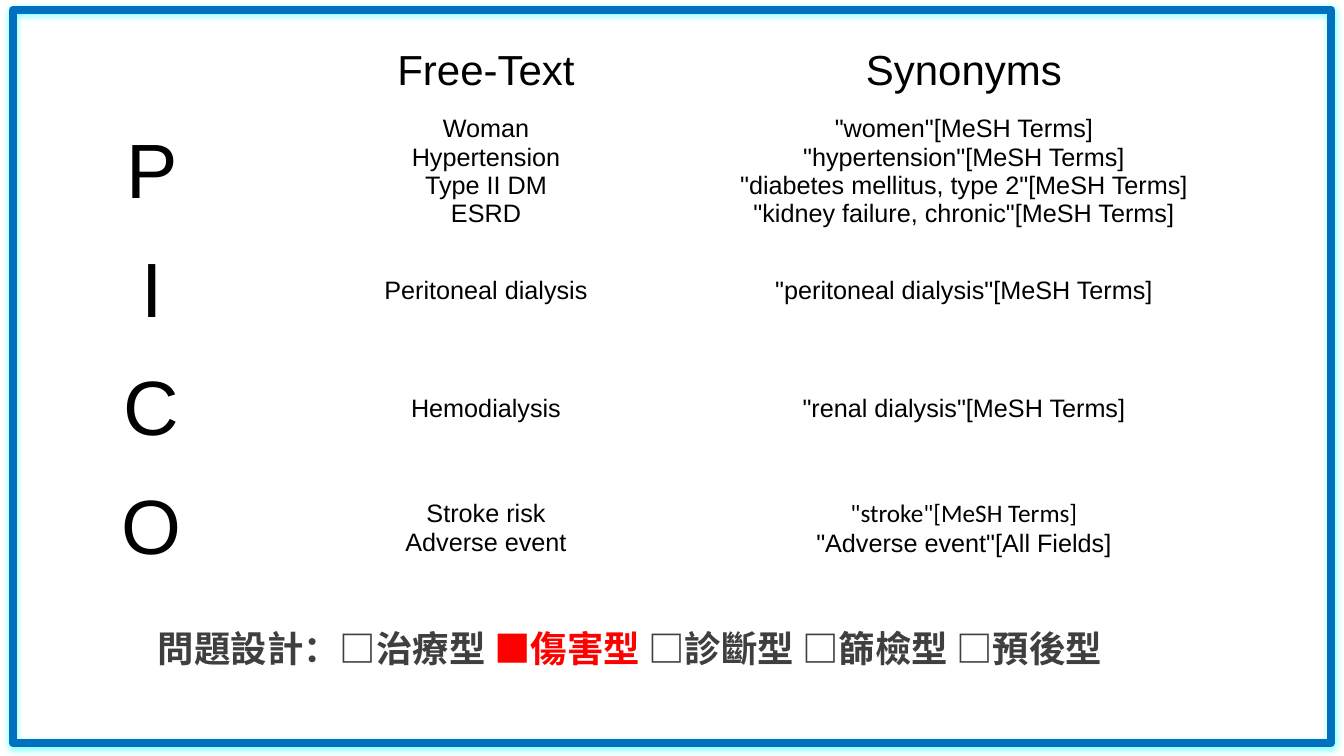
from lxml import etree
from pptx import Presentation, util as u
from pptx.dml.color import RGBColor
from pptx.enum import shapes, text
from pptx.oxml import parse_xml
from pptx.oxml.ns import qn

THEME = {
    "latin": "Arial", "alt": "Calibri", "cjk": "Noto Sans CJK SC",
    "ink": "000000", "frame": "0070C0", "gray": "3F3F3F", "mark": "FF0000",
    "head": 30, "letter": 55, "body": 18, "question": 26,
}
MESH = "[MeSH Terms]"
COLS = [2.23, 4.4, 5.08]
ROWS = [0.82] + [1.18] * 4
GRID = [
    ["", "Free-Text", "Synonyms"],
    ["P", "Woman\nHypertension\nType II DM\nESRD",
     "\n".join(f'"{term}"{MESH}' for term in
               ["women", "hypertension", "diabetes mellitus, type 2", "kidney failure, chronic"])],
    ["I", "Peritoneal dialysis", f'"peritoneal dialysis"{MESH}'],
    ["C", "Hemodialysis", f'"renal dialysis"{MESH}'],
    ["O", "Stroke risk\nAdverse event", f'"stroke"{MESH}\n"Adverse event"[All Fields]'],
]
QUESTION = [("問題設計：□治療型", "gray"), (" ■傷害型", "mark"), (" □診斷型 □篩檢型 □預後型", "gray")]


def add_run(p, words, size, font="latin", color="ink", bold=False):
    p.alignment = text.PP_ALIGN.CENTER
    r = p.add_run()
    r.text = words
    r.font.size = u.Pt(THEME[size])
    r.font.name = THEME[font]
    r.font.bold = bold
    r.font.color.rgb = RGBColor.from_string(THEME[color])
    etree.SubElement(r._r.get_or_add_rPr(), qn("a:ea")).set("typeface", THEME[font])


prs = Presentation()
prs.slide_width, prs.slide_height = u.Inches(13.33), u.Inches(7.5)
s = prs.slides.add_slide(prs.slide_layouts[6])

sp = s.shapes.add_shape(shapes.MSO_SHAPE.RECTANGLE,
                        u.Inches(0.13), u.Inches(0.1), u.Inches(13.07), u.Inches(7.27))
sp.fill.background()
sp.line.color.rgb = RGBColor.from_string(THEME["frame"])
sp.line.width = u.Pt(6)
sp.shadow.inherit = False
sp._element.spPr.find(qn("a:effectLst")).append(parse_xml(
    '<a:outerShdw xmlns:a="http://schemas.openxmlformats.org/drawingml/2006/main" '
    f'blurRad="{u.Pt(4.5)}" dist="{u.Pt(1.5)}" dir="5400000" rotWithShape="0">'
    '<a:srgbClr val="00FFFF"><a:alpha val="50000"/></a:srgbClr></a:outerShdw>'))

tbl = s.shapes.add_table(len(ROWS), len(COLS), u.Inches(0.39), u.Inches(0.29),
                         u.Inches(sum(COLS)), u.Inches(sum(ROWS))).table
tbl.first_row = tbl.horz_banding = False
for col, width in zip(tbl.columns, COLS):
    col.width = u.Inches(width)
for i, (row, height) in enumerate(zip(tbl.rows, ROWS)):
    row.height = u.Inches(height)
    for j, words in enumerate(GRID[i]):
        cell = tbl.cell(i, j)
        cell.fill.background()
        cell.vertical_anchor = text.MSO_ANCHOR.MIDDLE
        cell.margin_left = cell.margin_right = u.Inches(0.06)
        cell.margin_top = cell.margin_bottom = 0
        size = "head" if i == 0 else "letter" if j == 0 else "body"
        for n, line in enumerate(words.split("\n") if words else []):
            tf = cell.text_frame
            p = tf.add_paragraph() if n else tf.paragraphs[0]
            add_run(p, line, size, "alt" if line.startswith('"stroke"') else "latin")

tf = s.shapes.add_textbox(u.Inches(1.16), u.Inches(6.16), u.Inches(10.18), u.Inches(0.54)).text_frame
tf.word_wrap = True
tf.auto_size = text.MSO_AUTO_SIZE.SHAPE_TO_FIT_TEXT
for words, color in QUESTION:
    add_run(tf.paragraphs[0], words, "question", "cjk", color, True)

prs.save("out.pptx")
